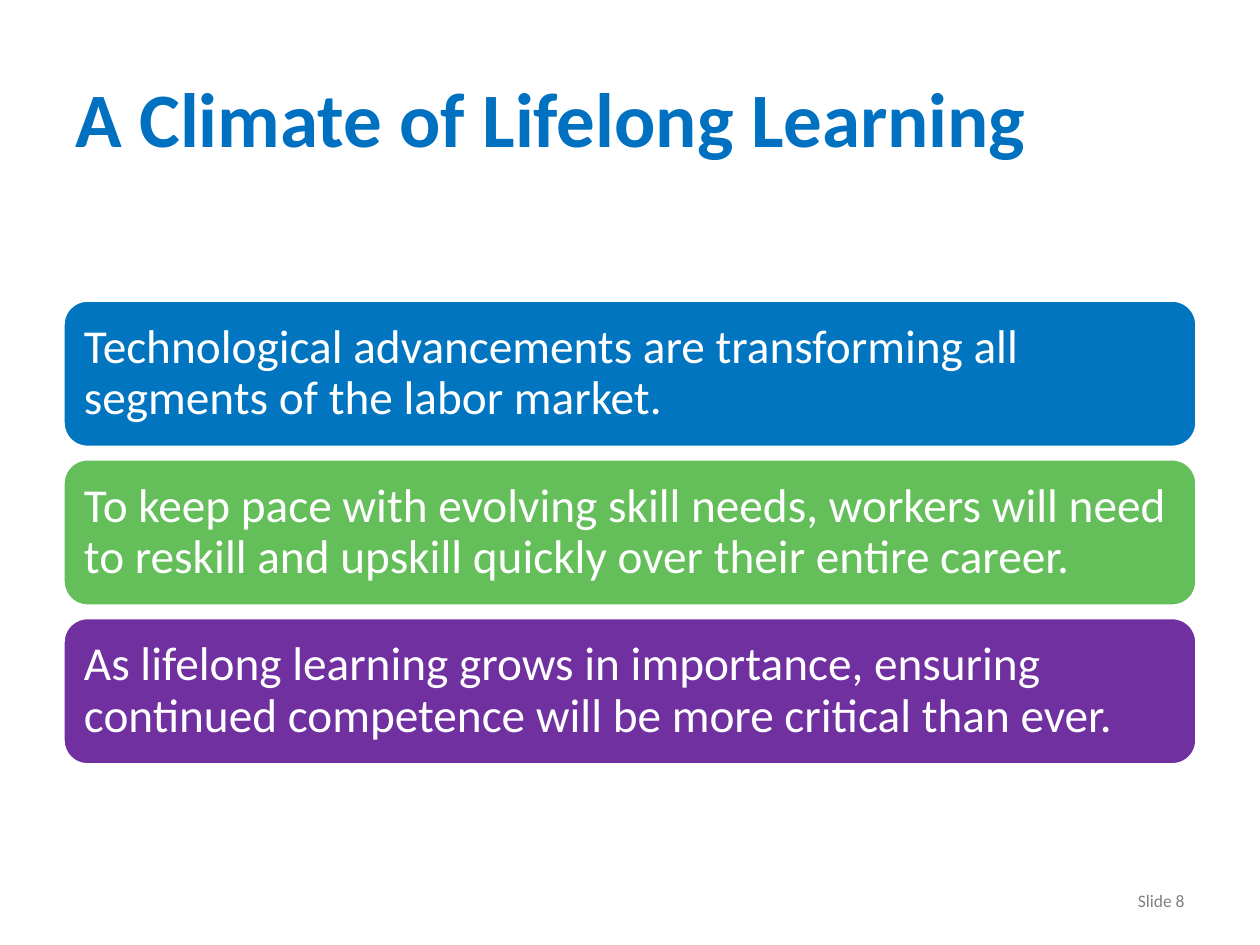
from pptx import Presentation
from pptx.dml.color import RGBColor
from pptx.enum.shapes import MSO_SHAPE
from pptx.enum.text import MSO_ANCHOR, PP_ALIGN
from pptx.util import Cm, Pt

BLUE = RGBColor(0x00, 0x70, 0xC0)
BAR_BLUE = RGBColor(0x01, 0x75, 0xC0)
GREEN = RGBColor(0x64, 0xBE, 0x5A)
PURPLE = RGBColor(0x70, 0x30, 0xA0)
GRAY = RGBColor(0x80, 0x80, 0x80)
WHITE = RGBColor(0xFF, 0xFF, 0xFF)

MARGIN = Cm(1.27)
CONTENT_WIDTH = Cm(22.86)

STATEMENTS = [
    ("Technological advancements are transforming all segments of the labor market.", BAR_BLUE),
    ("To keep pace with evolving skill needs, workers will need to reskill and upskill "
     "quickly over their entire career.", GREEN),
    ("As lifelong learning grows in importance, ensuring continued competence will be "
     "more critical than ever.", PURPLE),
]


def write_text(shape, text, size, color, bold=False, align=PP_ALIGN.LEFT):
    """Fill a shape with one vertically centred paragraph and return it."""
    frame = shape.text_frame
    frame.word_wrap = True
    frame.vertical_anchor = MSO_ANCHOR.MIDDLE
    paragraph = frame.paragraphs[0]
    paragraph.text = text
    paragraph.alignment = align
    font = paragraph.font
    font.name = "Calibri"
    font.size = Pt(size)
    font.bold = bold
    font.color.rgb = color
    return paragraph


def add_title(slide, left, top, width, height):
    """Place the slide title in the given box."""
    title = slide.shapes.add_textbox(left, top, width, height)
    write_text(title, "A Climate of Lifelong Learning", 44, BLUE, bold=True)


def add_statements(slide, left, top, width, height):
    """Stack the statement bars evenly in the given box."""
    gap = Cm(0.23)
    count = len(STATEMENTS)
    bar_height = (height - gap * (count - 1)) // count
    for index, (text, color) in enumerate(STATEMENTS):
        bar = slide.shapes.add_shape(
            MSO_SHAPE.ROUNDED_RECTANGLE,
            left, top + index * (bar_height + gap), width, bar_height)
        bar.shadow.inherit = False
        bar.fill.solid()
        bar.fill.fore_color.rgb = color
        bar.line.color.rgb = WHITE
        bar.line.width = Pt(2)
        frame = bar.text_frame
        frame.margin_left = frame.margin_right = Cm(0.28)
        frame.margin_top = frame.margin_bottom = Cm(0.28)
        paragraph = write_text(bar, text, 27, WHITE)
        paragraph.line_spacing = 0.9


def add_slide_number(slide, left, top, width, height):
    """Place the slide number at the right of the given box."""
    number = slide.shapes.add_textbox(left, top, width, height)
    write_text(number, "Slide 8", 10, GRAY, align=PP_ALIGN.RIGHT)


def main():
    """Build and save the presentation."""
    presentation = Presentation()
    presentation.slide_width = Cm(25.4)
    presentation.slide_height = Cm(19.05)
    slide = presentation.slides.add_slide(presentation.slide_layouts[6])
    add_title(slide, MARGIN, Cm(0.76), CONTENT_WIDTH, Cm(3.18))
    add_statements(slide, MARGIN, Cm(6.05), CONTENT_WIDTH, Cm(9.37))
    add_slide_number(slide, Cm(18.21), Cm(17.65), Cm(5.92), Cm(1.02))
    presentation.save("out.pptx")


if __name__ == "__main__":
    main()
